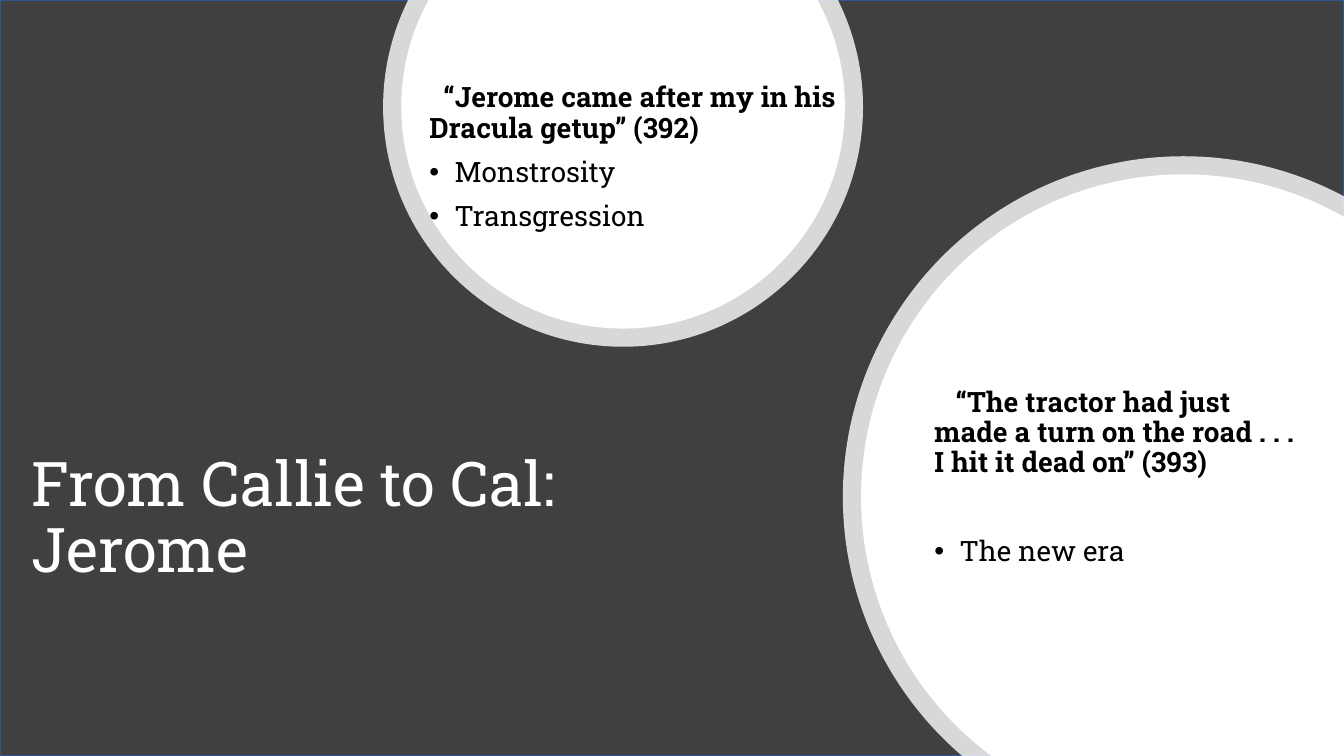
from math import acos, asin, cos, degrees, radians, sin, tan

from lxml.etree import SubElement
from pptx import Presentation
from pptx.dml.color import RGBColor
from pptx.enum.shapes import MSO_SHAPE
from pptx.enum.text import MSO_ANCHOR, MSO_AUTO_SIZE, PP_ALIGN
from pptx.oxml.ns import qn
from pptx.util import Inches, Pt

WIDTH, HEIGHT = 13.33, 7.5
FONT = "Roboto Slab"
CHARCOAL = RGBColor(0x40, 0x40, 0x40)
BLUE = RGBColor(0x32, 0x54, 0x91)
WHITE = RGBColor(0xFF, 0xFF, 0xFF)
BLACK = RGBColor(0, 0, 0)
RING = 0.18

presentation = Presentation()
presentation.slide_width = Inches(WIDTH)
presentation.slide_height = Inches(HEIGHT)
slide = presentation.slides.add_slide(presentation.slide_layouts[5])

background = slide.shapes.add_shape(
    MSO_SHAPE.RECTANGLE, 0, 0, Inches(WIDTH), Inches(HEIGHT))
background.shadow.inherit = False
background.fill.solid()
background.fill.fore_color.rgb = CHARCOAL
background.line.color.rgb = BLUE
background.line.width = Pt(1)


def add_disc(center_x, center_y, radius, start, end, corners):
    """Add a white disc: curves from start to end degrees, then straight corners."""
    stops = [start, *[a for a in range(0, 360, 90) if start < a < end], end]
    points = []
    for first, last in zip(stops, stops[1:]):
        first, last = radians(first), radians(last)
        handle = 4 / 3 * tan((last - first) / 4)
        points += [
            (cos(first), sin(first)),
            (cos(first) - handle * sin(first), sin(first) + handle * cos(first)),
            (cos(last) + handle * sin(last), sin(last) - handle * cos(last)),
        ]
    points.append((cos(last), sin(last)))
    outline = [(Inches(center_x + radius * x), Inches(center_y + radius * y))
               for x, y in points]
    outline += [(Inches(x), Inches(y)) for x, y in corners]
    builder = slide.shapes.build_freeform(*outline[0])
    builder.add_line_segments(outline[1:], close=True)
    disc = builder.convert_to_shape()
    # Join each three arc points into one Bezier curve
    lines = list(disc.element.iter(qn("a:lnTo")))[:len(points) - 1]
    for index in range(0, len(lines), 3):
        curve = lines[index].makeelement(qn("a:cubicBezTo"))
        lines[index].addprevious(curve)
        for line in lines[index:index + 3]:
            curve.append(line[0])
            line.getparent().remove(line)
    disc.shadow.inherit = False
    disc.fill.solid()
    disc.fill.fore_color.rgb = WHITE
    disc.line.fill.background()
    return disc


def format_paragraph(paragraph, text, size, color, bold=False):
    paragraph.alignment = PP_ALIGN.LEFT
    paragraph.line_spacing = 0.9
    run = paragraph.add_run()
    run.text = text
    run.font.name = FONT
    run.font.size = Pt(size)
    run.font.bold = bold
    run.font.color.rgb = color


top_x, top_y, top_radius = 6.18, 1.06, 2.2
right_x, right_y, right_radius = 11.74, 4.93, 3.2
for extra in (RING, 0):
    radius = top_radius + extra
    cut = degrees(asin(top_y / radius))
    top_disc = add_disc(top_x, top_y, radius, -cut, 180 + cut, [])
    radius = right_radius + extra
    bottom_cut = 180 - degrees(asin((HEIGHT - right_y) / radius))
    right_cut = 360 - degrees(acos((WIDTH - right_x) / radius))
    right_disc = add_disc(right_x, right_y, radius, bottom_cut, right_cut,
                          [(WIDTH, HEIGHT)])
    if extra:
        for ring in (top_disc, right_disc):
            ring_color = ring.element.spPr.find(qn("a:solidFill"))[0]
            SubElement(ring_color, qn("a:alpha"), val="80000")

# Box, bottom inset, quote, first-line indent, gap after the quote, bullets
notes = [
    ((4.16, 0.14, 4.6, 3.12), 0.31,
     "“Jerome came after my in his Dracula getup” (392)", 0.14, 10,
     ["Monstrosity", "Transgression"]),
    ((9.17, 3.26, 3.8, 3.7), 0.79,
     "“The tractor had just made a turn on the road . . . I hit it dead on” (393)",
     0.21, 42, ["The new era"]),
]
for box, bottom_inset, quote, indent, gap, bullets in notes:
    text_box = slide.shapes.add_textbox(*[Inches(length) for length in box])
    frame = text_box.text_frame
    frame.word_wrap = True
    frame.vertical_anchor = MSO_ANCHOR.MIDDLE
    frame.margin_bottom = Inches(bottom_inset)
    paragraph = frame.paragraphs[0]
    paragraph._p.get_or_add_pPr().set("indent", str(Inches(indent)))
    format_paragraph(paragraph, quote, 20, BLACK, bold=True)
    for index, bullet in enumerate(bullets):
        paragraph = frame.add_paragraph()
        paragraph.space_before = Pt(10 if index else gap)
        format_paragraph(paragraph, bullet, 20, BLACK)
        properties = paragraph._p.get_or_add_pPr()
        properties.set("marL", str(Inches(0.25)))
        properties.set("indent", str(Inches(-0.25)))
        SubElement(properties, qn("a:buFont"), typeface="Arial")
        SubElement(properties, qn("a:buChar"), char="•")

title = slide.shapes.title
title.left, title.top = Inches(0.21), Inches(3.83)
title.width, title.height = Inches(7.25), Inches(2.65)
title.text_frame.word_wrap = True
title.text_frame.auto_size = MSO_AUTO_SIZE.NONE
title.text_frame.vertical_anchor = MSO_ANCHOR.MIDDLE
format_paragraph(title.text_frame.paragraphs[0],
                 "From Callie to Cal: Jerome", 44, WHITE)
# Bring the title in front of the background
title.element.getparent().append(title.element)

presentation.save("out.pptx")
